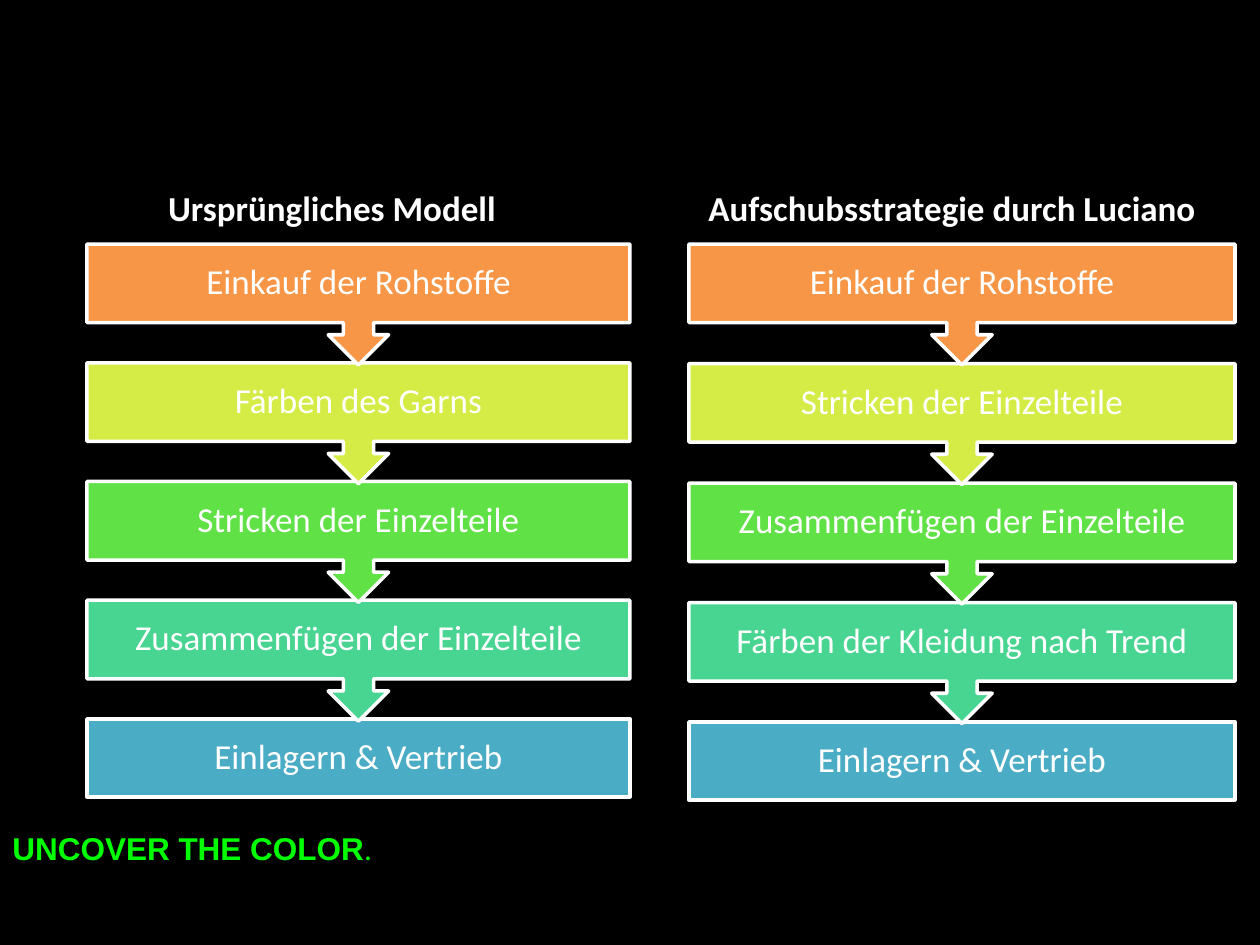
from dataclasses import dataclass

from pptx import Presentation
from pptx.dml.color import RGBColor
from pptx.enum.shapes import MSO_SHAPE
from pptx.enum.text import MSO_ANCHOR, PP_ALIGN
from pptx.util import Emu, Pt

RECT = MSO_SHAPE.RECTANGLE
CALLOUT = MSO_SHAPE.DOWN_ARROW_CALLOUT
CENTER, LEFT = PP_ALIGN.CENTER, PP_ALIGN.LEFT
MIDDLE = MSO_ANCHOR.MIDDLE

EMU_PER_PX = 914400 / 126
WHITE, BLACK, GREEN = "FFFFFF", "000000", "00FF00"
STEP_COLORS = ["F79646", "D5EC46", "60E146", "48D491", "4BACC6"]
FIRST_TOP = 244
CALLOUT_H, BOX_H = 121, 78
STEP_INSET = 20


@dataclass
class ProcessColumn:
    title: str
    title_x: int
    x: int
    w: int
    last_top: int
    steps: list[str]


COLUMNS = [
    ProcessColumn("Ursprüngliches Modell", 59, 87, 543, 719, [
        "Einkauf der Rohstoffe",
        "Färben des Garns",
        "Stricken der Einzelteile",
        "Zusammenfügen der Einzelteile",
        "Einlagern & Vertrieb",
    ]),
    ProcessColumn("Aufschubsstrategie durch Luciano", 679, 689, 546, 722, [
        "Einkauf der Rohstoffe",
        "Stricken der Einzelteile",
        "Zusammenfügen der Einzelteile",
        "Färben der Kleidung nach Trend",
        "Einlagern & Vertrieb",
    ]),
]


def px(n: float) -> Emu:
    return Emu(round(n * EMU_PER_PX))


def rgb(value: str) -> RGBColor:
    return RGBColor.from_string(value)


def add_run(p, text: str, *, size: int = 20, font: str = "Calibri",
            color: str = WHITE, bold: bool = False) -> None:
    r = p.add_run()
    r.text = text
    r.font.size = Pt(size)
    r.font.name = font
    r.font.bold = bold
    r.font.color.rgb = rgb(color)


def add_label(shapes, x: int, y: int, w: int, h: int, align=LEFT):
    tf = shapes.add_textbox(px(x), px(y), px(w), px(h)).text_frame
    tf.word_wrap = True
    p = tf.paragraphs[0]
    p.alignment = align
    return p


def add_step(shapes, kind, x: int, y: float, w: int, h: int,
             text: str, fill: str) -> None:
    sp = shapes.add_shape(kind, px(x), px(y), px(w), px(h))
    sp.shadow.inherit = False
    sp.fill.solid()
    sp.fill.fore_color.rgb = rgb(fill)
    sp.line.color.rgb = rgb(WHITE)
    sp.line.width = Pt(2)
    tf = sp.text_frame
    tf.word_wrap = True
    tf.vertical_anchor = MIDDLE
    tf.margin_left = tf.margin_right = px(STEP_INSET)
    tf.margin_top = tf.margin_bottom = px(STEP_INSET)
    p = tf.paragraphs[0]
    p.alignment = CENTER
    p.line_spacing = 0.9
    add_run(p, text)


def add_column(s, col: ProcessColumn) -> None:
    group = s.shapes.add_group_shape()
    last = len(col.steps) - 1
    pitch = (col.last_top - FIRST_TOP) / last
    for i in range(last, -1, -1):
        kind, h = (RECT, BOX_H) if i == last else (CALLOUT, CALLOUT_H)
        add_step(group.shapes, kind, col.x, FIRST_TOP + i * pitch,
                 col.w, h, col.steps[i], STEP_COLORS[i])
    p = add_label(s.shapes, col.title_x, 180, 546, 55, CENTER)
    add_run(p, col.title, bold=True)


def main() -> None:
    prs = Presentation()
    prs.slide_width, prs.slide_height = px(1260), px(945)
    s = prs.slides.add_slide(prs.slide_layouts[6])
    s.background.fill.solid()
    s.background.fill.fore_color.rgb = rgb(BLACK)

    p = add_label(s.shapes, 0, 823, 408, 50)
    add_run(p, "UNCOVER THE COLOR", size=18, font="Arial", color=GREEN, bold=True)
    add_run(p, ".", size=18, color=GREEN)

    for col in COLUMNS:
        add_column(s, col)
    prs.save("out.pptx")


if __name__ == "__main__":
    main()
